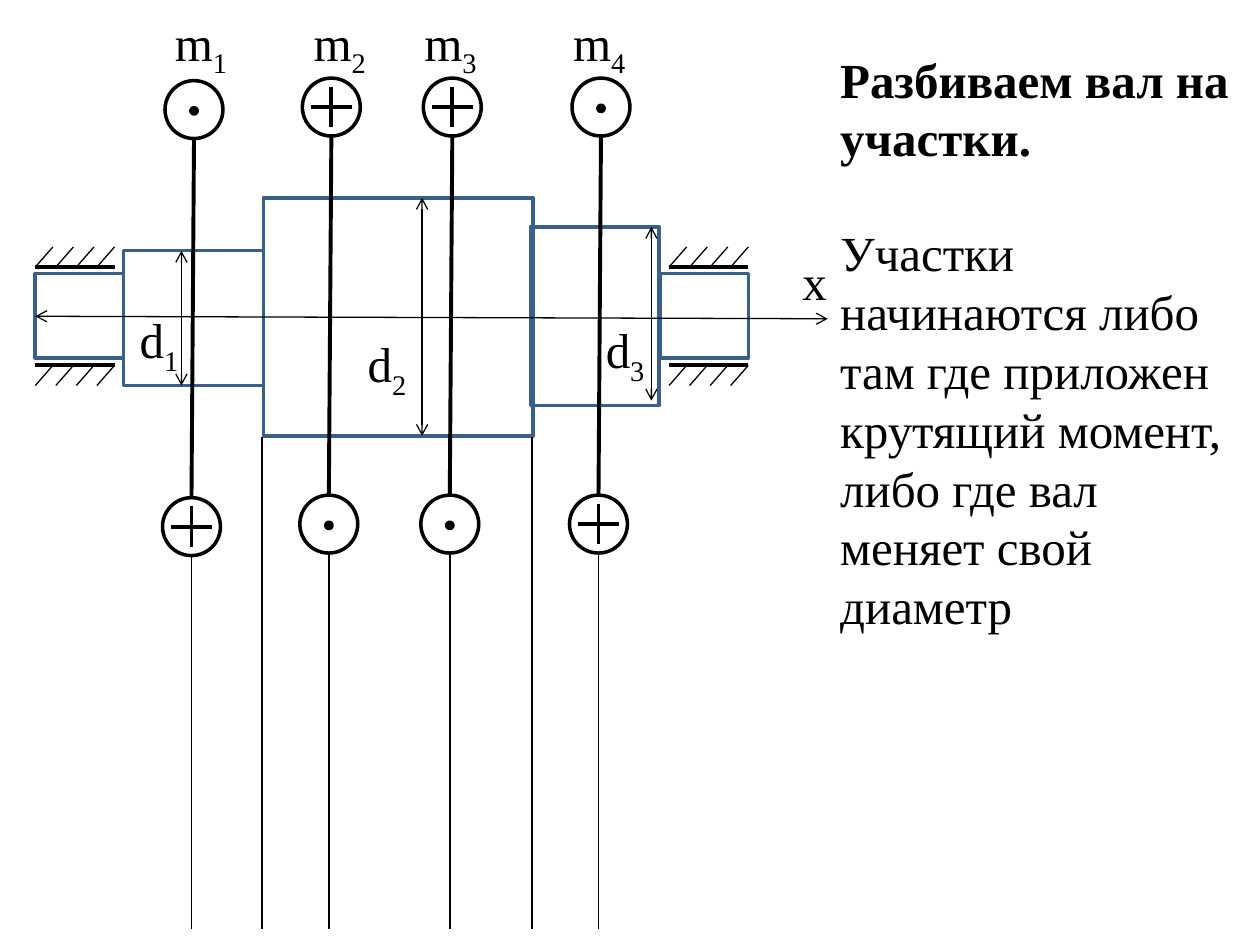
from lxml.etree import SubElement
from pptx import Presentation
from pptx.dml.color import RGBColor
from pptx.enum.shapes import MSO_CONNECTOR, MSO_SHAPE
from pptx.enum.text import MSO_AUTO_SIZE
from pptx.oxml.ns import qn
from pptx.util import Inches, Pt

BLACK, WHITE, BLUE = "000000", "FFFFFF", "3A5F8C"


def color(code):
    return RGBColor.from_string(code)


class Sketch:
    font = "Times New Roman"
    size = 28
    radius = 0.23

    def __init__(self, slide):
        self.shapes = slide.shapes

    def line(self, x1, y1, x2, y2, width=0.75, arrows=False):
        link = self.shapes.add_connector(
            MSO_CONNECTOR.STRAIGHT, Inches(x1), Inches(y1), Inches(x2), Inches(y2))
        link.line.color.rgb = color(BLACK)
        link.line.width = Pt(width)
        props = link._element.spPr
        if arrows:
            for end in ("a:headEnd", "a:tailEnd"):
                SubElement(props.find(qn("a:ln")), qn(end), type="arrow")
        SubElement(props, qn("a:effectLst"))

    def shape(self, kind, x, y, w, h, edge=BLACK, fill=None):
        item = self.shapes.add_shape(kind, Inches(x), Inches(y), Inches(w), Inches(h))
        item.shadow.inherit = False
        item.line.color.rgb = color(edge)
        item.line.width = Pt(2)
        if fill:
            item.fill.solid()
            item.fill.fore_color.rgb = color(fill)
        else:
            item.fill.background()

    def text(self, x, y, w, h, parts, wrap=True):
        """Add a text box; each part is (text, subscript, bold)."""
        box = self.shapes.add_textbox(Inches(x), Inches(y), Inches(w), Inches(h))
        frame = box.text_frame
        frame.word_wrap = wrap
        frame.auto_size = MSO_AUTO_SIZE.SHAPE_TO_FIT_TEXT
        for i, (words, sub, bold) in enumerate(parts):
            para = frame.add_paragraph() if i else frame.paragraphs[0]
            para.font.name = self.font
            para.font.size = Pt(self.size)
            para.font.bold = bold
            para.font.color.rgb = color(BLACK)
            para.add_run().text = words
            if sub:
                run = para.add_run()
                run.text = sub
                run._r.get_or_add_rPr().set("baseline", "-25000")
            if i:
                para.space_before = Pt(32)

    def disc(self, x, y, r, fill):
        self.shape(MSO_SHAPE.OVAL, x - r, y - r, 2 * r, 2 * r, fill=fill)

    def sign(self, x, y, inward):
        """Circle with a cross (inward) or a dot (outward)."""
        self.disc(x, y, self.radius, WHITE)
        if inward:
            self.line(x - 0.16, y, x + 0.16, y, 2.25)
            self.line(x, y - 0.16, x, y + 0.16, 2.25)
        else:
            self.disc(x, y + 0.01, 0.025, BLACK)

    def moment(self, x, y, inward):
        low, drop, r = x - 0.02, y + 3.31, self.radius
        self.line(x, y + r, low, drop - r, 2.25)
        self.sign(x, y, inward)
        self.sign(low, drop, not inward)
        self.line(low, drop + r, low, 7.37, 1)

    def support(self, x, y, top):
        """Bearing surface at y with hatching that starts at top."""
        self.line(x, y, x + 0.63, y, 2.25)
        for i in range(4):
            tip = x + 0.14 + i * 0.163
            self.line(tip, top, tip - 0.14, top + 0.16)


def main():
    deck = Presentation()
    deck.slide_width, deck.slide_height = Inches(10), Inches(7.5)
    art = Sketch(deck.slides.add_slide(deck.slide_layouts[6]))

    steps = [(0.28, 2.17, 0.7, 0.67), (0.98, 1.99, 1.11, 1.07),
             (2.09, 1.57, 2.14, 1.89), (4.21, 1.8, 1.02, 1.42),
             (5.24, 2.17, 0.7, 0.67)]
    for step in steps:
        art.shape(MSO_SHAPE.RECTANGLE, *step, edge=BLUE)
    art.line(0.28, 2.51, 6.57, 2.53, arrows=True)

    for x in (0.28, 5.31):
        art.support(x, 2.12, 1.96)
        art.support(x, 2.9, 2.9)

    sizes = [(1.44, 1.99, 3.06, 1.01, 2.41), (3.35, 1.57, 3.46, 2.82, 2.6),
             (5.17, 1.8, 3.18, 4.71, 2.49)]
    for i, (x, top, base, left, y) in enumerate(sizes, 1):
        art.line(x, top, x, base, arrows=True)
        art.text(left, y, 0.53, 0.57, [("d", str(i), False)])

    moments = [(1.54, 0.87, False, 1.29), (2.63, 0.85, True, 2.39),
               (3.59, 0.85, True, 3.27), (4.77, 0.85, False, 4.45)]
    for i, (x, y, inward, left) in enumerate(moments, 1):
        art.moment(x, y, inward)
        art.text(left, 0.05, 0.64, 0.57, [("m", str(i), False)])

    for x in (2.08, 4.22):
        art.line(x, 3.47, x, 7.37, 1)

    art.text(6.27, 1.95, 0.4, 0.57, [("x", "", False)], wrap=False)
    art.text(6.57, 0.34, 3.3, 4.81, [
        ("Разбиваем вал на участки.", "", True),
        ("Участки начинаются либо там где приложен крутящий момент, "
         "либо где вал меняет свой диаметр", "", False)])
    deck.save("out.pptx")


if __name__ == "__main__":
    main()
